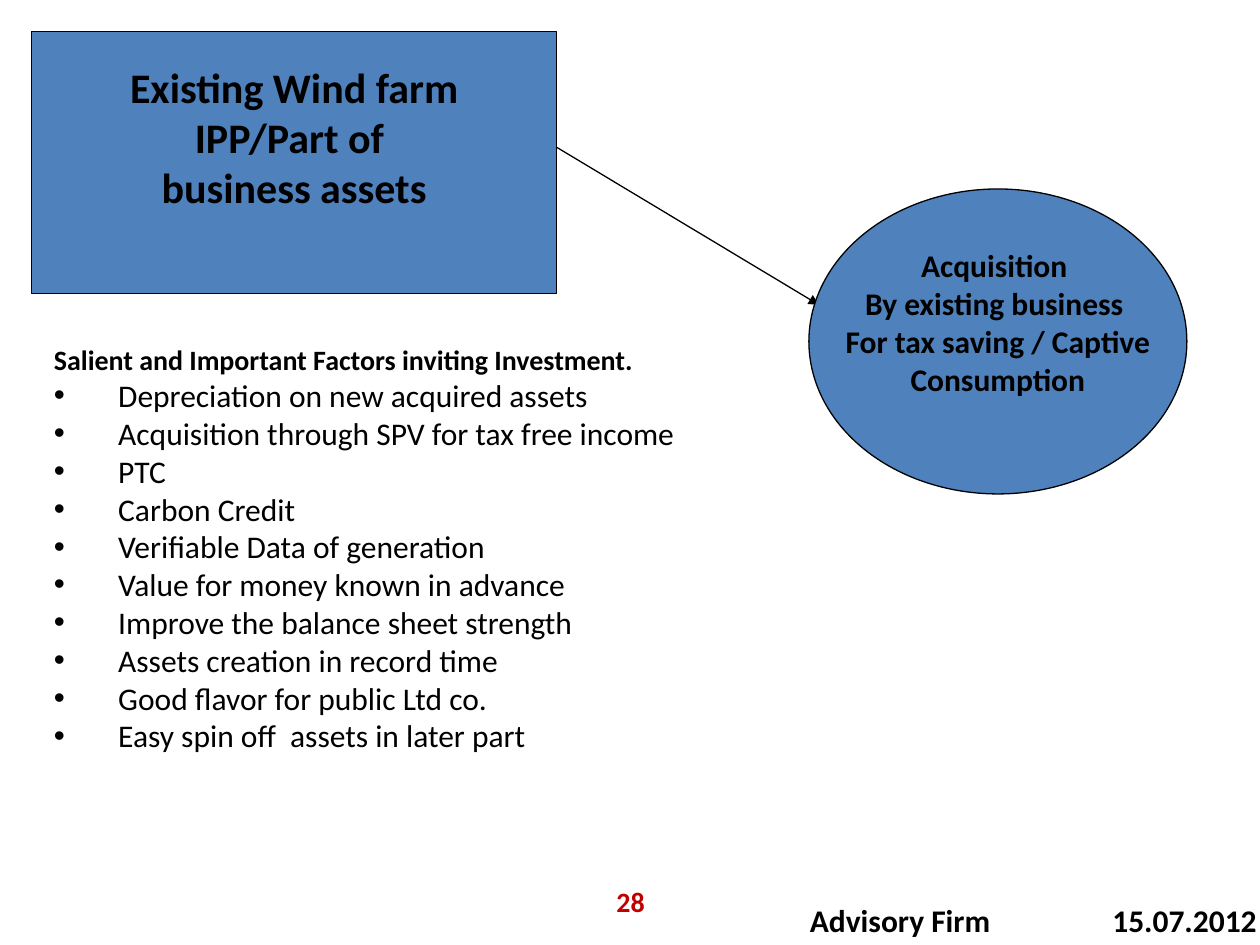
from lxml.etree import SubElement as Sub
from pptx import Presentation
from pptx.dml.color import RGBColor as RGB
from pptx.enum.shapes import MSO_CONNECTOR as Conn, MSO_SHAPE as Kind
from pptx.enum.text import MSO_ANCHOR as Anchor, PP_ALIGN as Align
from pptx.oxml.ns import qn
from pptx.util import Emu, Inches, Pt

FONT, BLACK, BLUE, RED = "Calibri", "000000", "4F81BD", "C00000"
NODES = [
    (Kind.RECTANGLE, (0.25, 0.25, 4.17, 2.08), 24, 0.46,
     ["Existing Wind farm", "IPP/Part of ", "business assets"]),
    (Kind.OVAL, (6.42, 1.5, 3, 2.42), 18, 0.36,
     ["Acquisition ", "By existing business ",
      "For tax saving / Captive", "Consumption"]),
]
ARROW = (4.42, 1.17, 6.5, 2.42)
HEAD = "Salient and Important Factors inviting Investment."
FACTS = [
    "Depreciation on new acquired assets",
    "Acquisition through SPV for tax free income",
    "PTC",
    "Carbon Credit",
    "Verifiable Data of generation",
    "Value for money known in advance",
    "Improve the balance sheet strength",
    "Assets creation in record time",
    "Good flavor for public Ltd co.",
    "Easy spin off  assets in later part",
]
FIRM, DATE, PAGE = "Advisory Firm", "15.07.2012", "28"
INDENT, TAB = Inches(0.51), Inches(2.4)


def paint(part, color):
    part.solid()
    part.fore_color.rgb = RGB.from_string(color)


def write(frame, lines, size, color=BLACK, bold=True, align=Align.LEFT):
    frame.text = "\n".join(lines)
    for para in frame.paragraphs:
        para.alignment = align
        for run in para.runs:
            font = run.font
            font.name, font.size, font.bold = FONT, Pt(size), bold
            paint(font.fill, color)


def edge(line):
    paint(line.fill, BLACK)
    line.width = Pt(0.75)


def add_node(slide, kind, box, size, base, lines):
    node = slide.shapes.add_shape(kind, *map(Inches, box))
    node.shadow.inherit = False
    paint(node.fill, BLUE)
    edge(node.line)
    frame = node.text_frame
    frame.word_wrap = False
    frame.vertical_anchor = Anchor.MIDDLE
    frame.margin_bottom = Inches(base)
    write(frame, lines, size, align=Align.CENTER)


def add_arrow(slide, ends):
    arrow = slide.shapes.add_connector(Conn.STRAIGHT, *map(Inches, ends))
    edge(arrow.line)
    Sub(arrow.line._get_or_add_ln(), qn("a:tailEnd"), type="triangle")
    Sub(arrow._element.spPr, qn("a:effectLst"))


def add_text(slide, box, *args, **style):
    frame = slide.shapes.add_textbox(*map(Inches, box)).text_frame
    frame.word_wrap = True
    write(frame, *args, **style)
    return frame


def add_facts(slide):
    frame = add_text(slide, (0.33, 2.67, 5.75, 3.97),
                     [HEAD] + FACTS, 18, bold=False)
    for row, para in enumerate(frame.paragraphs):
        props = para._p.get_or_add_pPr()
        props.set("marL", str(Emu(INDENT)))
        props.set("indent", str(-INDENT))
        if row:
            Sub(props, qn("a:buFont"), typeface="Arial")
            Sub(props, qn("a:buChar"), char="•")
        else:
            font = para.runs[0].font
            font.size, font.bold = Pt(16), True


def add_foot(slide):
    frame = add_text(slide, (6.33, 7.1, 4, 0.4), [f"{FIRM}\t{DATE}"], 18)
    stops = Sub(frame.paragraphs[0]._p.get_or_add_pPr(), qn("a:tabLst"))
    Sub(stops, qn("a:tab"), pos=str(TAB), algn="l")
    page = add_text(slide, (3.42, 6.95, 3.17, 0.4), [PAGE], 16,
                    color=RED, align=Align.CENTER)
    page.vertical_anchor = Anchor.MIDDLE


def main():
    deck = Presentation()
    deck.slide_width, deck.slide_height = Inches(10), Inches(7.5)
    slide = deck.slides.add_slide(deck.slide_layouts[6])
    add_arrow(slide, ARROW)
    for node in NODES:
        add_node(slide, *node)
    add_facts(slide)
    add_foot(slide)
    deck.save("out.pptx")


if __name__ == "__main__":
    main()
